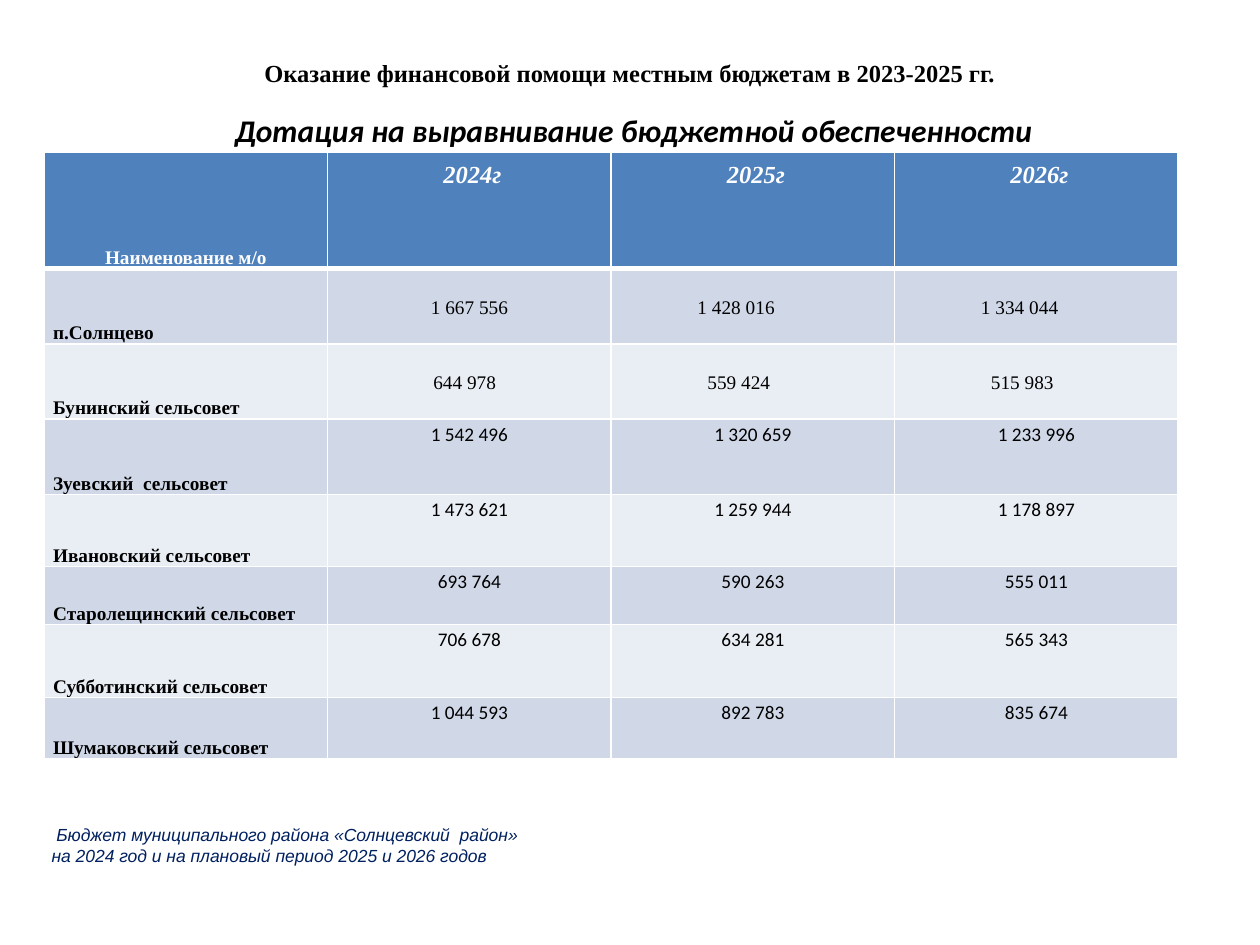
import pptx
import pptx.dml.color
import pptx.enum.text
import pptx.oxml
import pptx.oxml.ns
import pptx.util
from dataclasses import dataclass

Cm = pptx.util.Cm
ALIGN = pptx.enum.text.PP_ALIGN
ANCHOR = pptx.enum.text.MSO_ANCHOR


@dataclass(frozen=True)
class Theme:
    serif: str = "Times New Roman"
    sans: str = "Calibri"
    footer_font: str = "Arial"
    black: str = "000000"
    white: str = "FFFFFF"
    navy: str = "002060"
    header: str = "4F81BD"
    bands: tuple = ("D0D8E8", "E9EDF4")
    title_size: int = 14
    subtitle_size: int = 18
    cell_size: int = 11
    footer_size: int = 10


THEME = Theme()

YEARS = ["2024г", "2025г", "2026г"]
GRANTS = [
    ("п.Солнцево", "1 667 556", "1 428 016", "1 334 044"),
    ("Бунинский сельсовет", "644 978", "559 424", "515 983"),
    ("Зуевский  сельсовет", "1 542 496", "1 320 659", "1 233 996"),
    ("Ивановский сельсовет", "1 473 621", "1 259 944", "1 178 897"),
    ("Старолещинский сельсовет", "693 764", "590 263", "555 011"),
    ("Субботинский сельсовет", "706 678", "634 281", "565 343"),
    ("Шумаковский сельсовет", "1 044 593", "892 783", "835 674"),
]
ROW_HEIGHTS = [2.35, 1.52, 1.52, 1.52, 1.45, 1.17, 1.47, 1.24]
# Left indents of the figures in the first two rows; None means centred
INDENTS = {1: (None, 1.56, 1.56), 2: (1.95, 1.76, 1.76)}
CELL_MARGIN = 0.18


def rgb(color):
    return pptx.dml.color.RGBColor.from_string(color)


def write_text(text_frame, *lines, font, size, color, bold=False, italic=False,
               align=ALIGN.LEFT, spacing=None):
    """Fill a text frame with one paragraph for each line."""
    for index, line in enumerate(lines):
        paragraph = text_frame.paragraphs[0] if index == 0 else text_frame.add_paragraph()
        paragraph.alignment = align
        if spacing:
            paragraph.line_spacing = spacing
        run = paragraph.add_run()
        run.text = line
        run.font.name = font
        run.font.size = pptx.util.Pt(size)
        run.font.bold = bold
        run.font.italic = italic
        run.font.color.rgb = rgb(color)


def add_text_box(slide, left, top, width, height, *lines, **text_format):
    shape = slide.shapes.add_textbox(Cm(left), Cm(top), Cm(width), Cm(height))
    shape.text_frame.word_wrap = True
    write_text(shape.text_frame, *lines, **text_format)


def place_title(slide, left, top, width, height):
    title = slide.shapes.title
    title.left, title.top, title.width, title.height = map(Cm, (left, top, width, height))
    title.text_frame.auto_size = pptx.enum.text.MSO_AUTO_SIZE.NONE
    title.text_frame.vertical_anchor = ANCHOR.MIDDLE
    write_text(title.text_frame,
               "Оказание финансовой помощи местным бюджетам в 2023-2025 гг.",
               font=THEME.serif, size=THEME.title_size, color=THEME.black,
               bold=True, align=ALIGN.CENTER)


def style_cell(cell, fill, bottom_width=1):
    """Set the fill and the white borders of a cell."""
    cell.fill.solid()
    cell.fill.fore_color.rgb = rgb(fill)
    properties = cell._tc.get_or_add_tcPr()
    widths = {"lnL": 1, "lnR": 1, "lnT": 1, "lnB": bottom_width}
    for position, (side, width) in enumerate(widths.items()):
        properties.insert(position, pptx.oxml.parse_xml(
            f'<a:{side} {pptx.oxml.ns.nsdecls("a")} w="{pptx.util.Pt(width)}">'
            f'<a:solidFill><a:srgbClr val="{THEME.white}"/></a:solidFill></a:{side}>'))


def set_margins(cell, left=CELL_MARGIN):
    cell.margin_left, cell.margin_right = Cm(left), Cm(CELL_MARGIN)
    cell.margin_top = cell.margin_bottom = 0


def write_cell(cell, text, **text_format):
    write_text(cell.text_frame, text, spacing=1.15, **text_format)


def fill_header(table):
    for column in range(len(YEARS) + 1):
        style_cell(table.cell(0, column), THEME.header, bottom_width=3)
    name_cell = table.cell(0, 0)
    set_margins(name_cell)
    name_cell.vertical_anchor = ANCHOR.BOTTOM
    write_cell(name_cell, "Наименование м/о", font=THEME.serif, size=THEME.cell_size,
               color=THEME.white, bold=True, align=ALIGN.CENTER)
    for column, year in enumerate(YEARS, start=1):
        write_cell(table.cell(0, column), f" {year}", font=THEME.serif,
                   size=THEME.title_size, color=THEME.white, bold=True, italic=True,
                   align=ALIGN.CENTER)


def fill_row(table, row, name, figures):
    band = THEME.bands[(row - 1) % 2]
    name_cell = table.cell(row, 0)
    style_cell(name_cell, band)
    set_margins(name_cell)
    name_cell.vertical_anchor = ANCHOR.BOTTOM
    write_cell(name_cell, name, font=THEME.serif, size=THEME.cell_size,
               color=THEME.black, bold=True)

    indented = row in INDENTS
    indents = INDENTS.get(row, (None,) * len(figures))
    for column, (figure, indent) in enumerate(zip(figures, indents), start=1):
        cell = table.cell(row, column)
        style_cell(cell, band)
        set_margins(cell, CELL_MARGIN + (indent or 0))
        cell.vertical_anchor = ANCHOR.MIDDLE if indented else ANCHOR.TOP
        write_cell(cell, figure, font=THEME.serif if indented else THEME.sans,
                   size=THEME.cell_size, color=THEME.black,
                   align=ALIGN.LEFT if indent else ALIGN.CENTER)


def add_grant_table(slide, left, top, width):
    columns = len(YEARS) + 1
    table = slide.shapes.add_table(len(ROW_HEIGHTS), columns, Cm(left), Cm(top),
                                   Cm(width), Cm(sum(ROW_HEIGHTS))).table
    for column in table.columns:
        column.width = Cm(width / columns)
    for row, height in zip(table.rows, ROW_HEIGHTS):
        row.height = Cm(height)
    fill_header(table)
    for row, (name, *figures) in enumerate(GRANTS, start=1):
        fill_row(table, row, name, figures)


def main():
    presentation = pptx.Presentation()
    presentation.slide_width, presentation.slide_height = Cm(25.4), Cm(19.05)
    slide = presentation.slides.add_slide(presentation.slide_layouts[5])

    # Title, table and subtitle
    place_title(slide, 1.27, 0.76, 22.86, 1.42)
    add_grant_table(slide, 0.89, 3.06, 22.86)
    add_text_box(slide, 1.32, 2.11, 22.91, 1.02,
                 "Дотация на выравнивание бюджетной обеспеченности",
                 font=THEME.sans, size=THEME.subtitle_size, color=THEME.black,
                 bold=True, italic=True, align=ALIGN.CENTER)

    # Footer note
    add_text_box(slide, 0.79, 16.48, 19.74, 1.12,
                 " Бюджет муниципального района «Солнцевский  район»",
                 "на 2024 год и на плановый период 2025 и 2026 годов",
                 font=THEME.footer_font, size=THEME.footer_size, color=THEME.navy,
                 italic=True)

    presentation.save("out.pptx")


if __name__ == "__main__":
    main()
